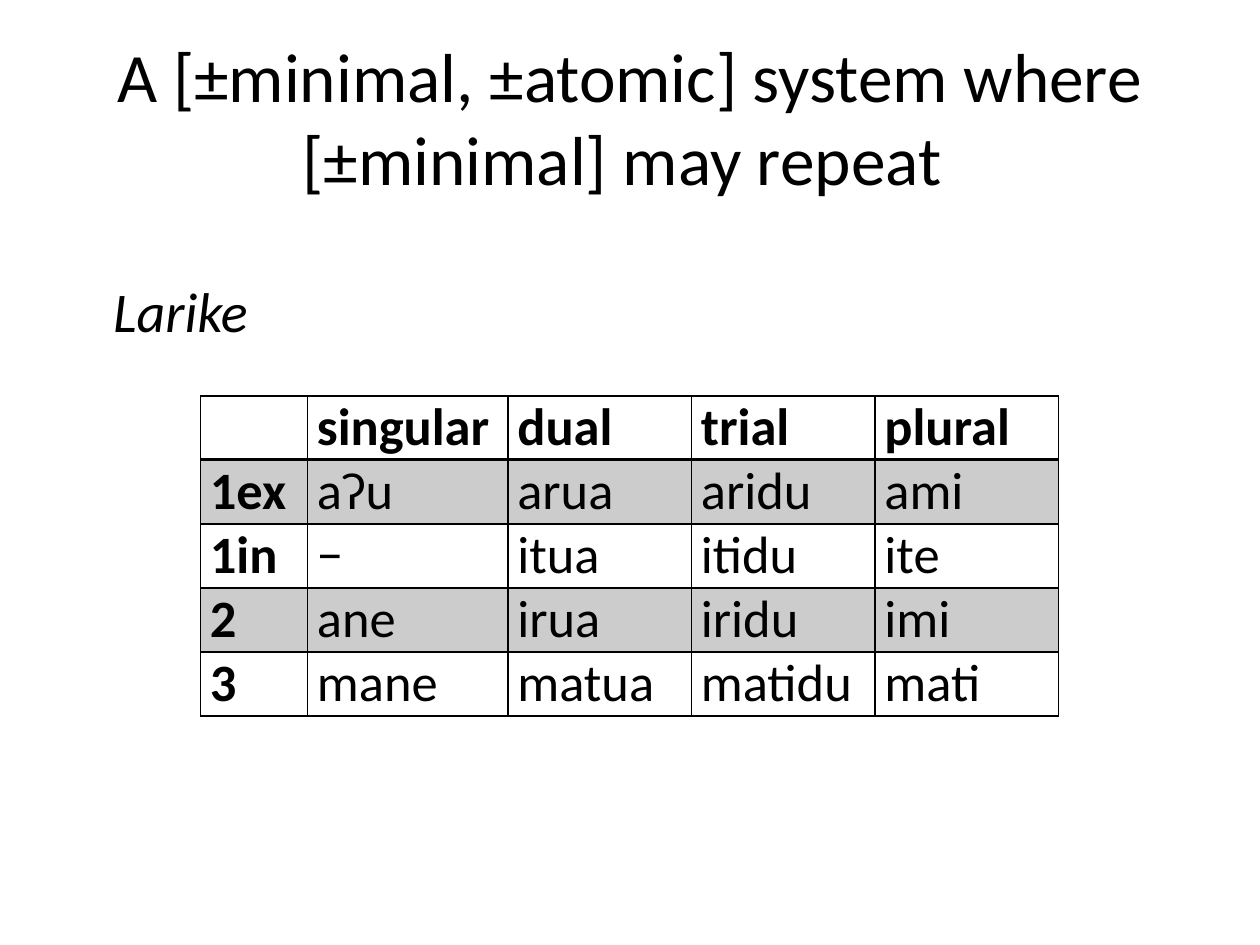
from lxml import etree
from pptx import Presentation
from pptx.dml.color import RGBColor
from pptx.enum.text import MSO_ANCHOR, PP_ALIGN
from pptx.oxml.ns import qn
from pptx.util import Cm, Pt

CENTER, LEFT = PP_ALIGN.CENTER, PP_ALIGN.LEFT
MIDDLE, TOP = MSO_ANCHOR.MIDDLE, MSO_ANCHOR.TOP
BLACK = "000000"
FONT = "Calibri"

COLUMN_WIDTHS = [2.16, 4.04, 3.7, 3.7, 3.7]
ROW_HEIGHT = 1.29
PRONOUNS = [
    ["", "singular", "dual", "trial", "plural"],
    ["1ex", "aɁu", "arua", "aridu", "ami"],
    ["1in", "−", "itua", "itidu", "ite"],
    ["2", "ane", "irua", "iridu", "imi"],
    ["3", "mane", "matua", "matidu", "mati"],
]


def color(hex_string):
    return RGBColor.from_string(hex_string)


def write(paragraph, text, size, **formats):
    run = paragraph.add_run()
    run.text = text
    values = {"name": FONT, "size": Pt(size), **formats}
    for name, value in values.items():
        setattr(run.font, name, value)
    run.font.color.rgb = color(BLACK)


def add_text(slide, box, text, size, align=LEFT, anchor=TOP, wrap=True, **formats):
    shape = slide.shapes.add_textbox(*map(Cm, box))
    shape.text_frame.word_wrap = wrap
    shape.text_frame.vertical_anchor = anchor
    paragraph = shape.text_frame.paragraphs[0]
    paragraph.alignment = align
    write(paragraph, text, size, **formats)


def set_borders(cell, widths):
    """Draw black cell borders; widths maps L, R, T and B to points."""
    properties = cell._tc.get_or_add_tcPr()
    for position, (side, width) in enumerate(widths.items()):
        line = etree.Element(qn(f"a:ln{side}"), w=str(Pt(width)))
        fill = etree.SubElement(line, qn("a:solidFill"))
        etree.SubElement(fill, qn("a:srgbClr"), val=BLACK)
        # Borders come before the fill in the cell properties
        properties.insert(position, line)


def shade(cell, hex_string, opacity):
    cell.fill.solid()
    cell.fill.fore_color.rgb = color(hex_string)
    tone = cell._tc.tcPr.find(f".//{qn('a:srgbClr')}")
    etree.SubElement(tone, qn("a:alpha"), val=str(opacity * 1000))


def format_cell(cell, row, column, text):
    margins = {"margin_left": Cm(0.19), "margin_right": Cm(0.19),
               "margin_top": 0, "margin_bottom": 0}
    for name, value in margins.items():
        setattr(cell, name, value)
    if text:
        write(cell.text_frame.paragraphs[0], text, 30, bold=row == 0 or column == 0)
    # Every second row is banded
    if row % 2:
        shade(cell, BLACK, 20)
    else:
        cell.fill.background()
    # A heavier rule separates the header
    set_borders(cell, {"L": 1, "R": 1, "T": 2 if row == 1 else 1,
                       "B": 2 if row == 0 else 1})


def add_pronoun_table(slide, left, top):
    frame = slide.shapes.add_table(
        len(PRONOUNS), len(COLUMN_WIDTHS), Cm(left), Cm(top),
        Cm(sum(COLUMN_WIDTHS)), Cm(ROW_HEIGHT * len(PRONOUNS)))
    table = frame.table
    for column, width in zip(table.columns, COLUMN_WIDTHS):
        column.width = Cm(width)
    for row, texts in enumerate(PRONOUNS):
        table.rows[row].height = Cm(ROW_HEIGHT)
        for column, text in enumerate(texts):
            format_cell(table.cell(row, column), row, column, text)


def main():
    presentation = Presentation()
    presentation.slide_width, presentation.slide_height = Cm(25.4), Cm(19.05)
    slide = presentation.slides.add_slide(presentation.slide_layouts[6])

    # Title
    add_text(slide, (1.27, 0.76, 22.86, 3.18),
             "A [±minimal, ±atomic] system where [±minimal] may repeat ",
             39.6, align=CENTER, anchor=MIDDLE)

    # Pronoun paradigm
    add_pronoun_table(slide, 4.04, 7.98)

    # Language name
    add_text(slide, (2.03, 5.44, 3.23, 1.63), "Larike", 32, wrap=False, italic=True)

    presentation.save("out.pptx")


if __name__ == "__main__":
    main()
